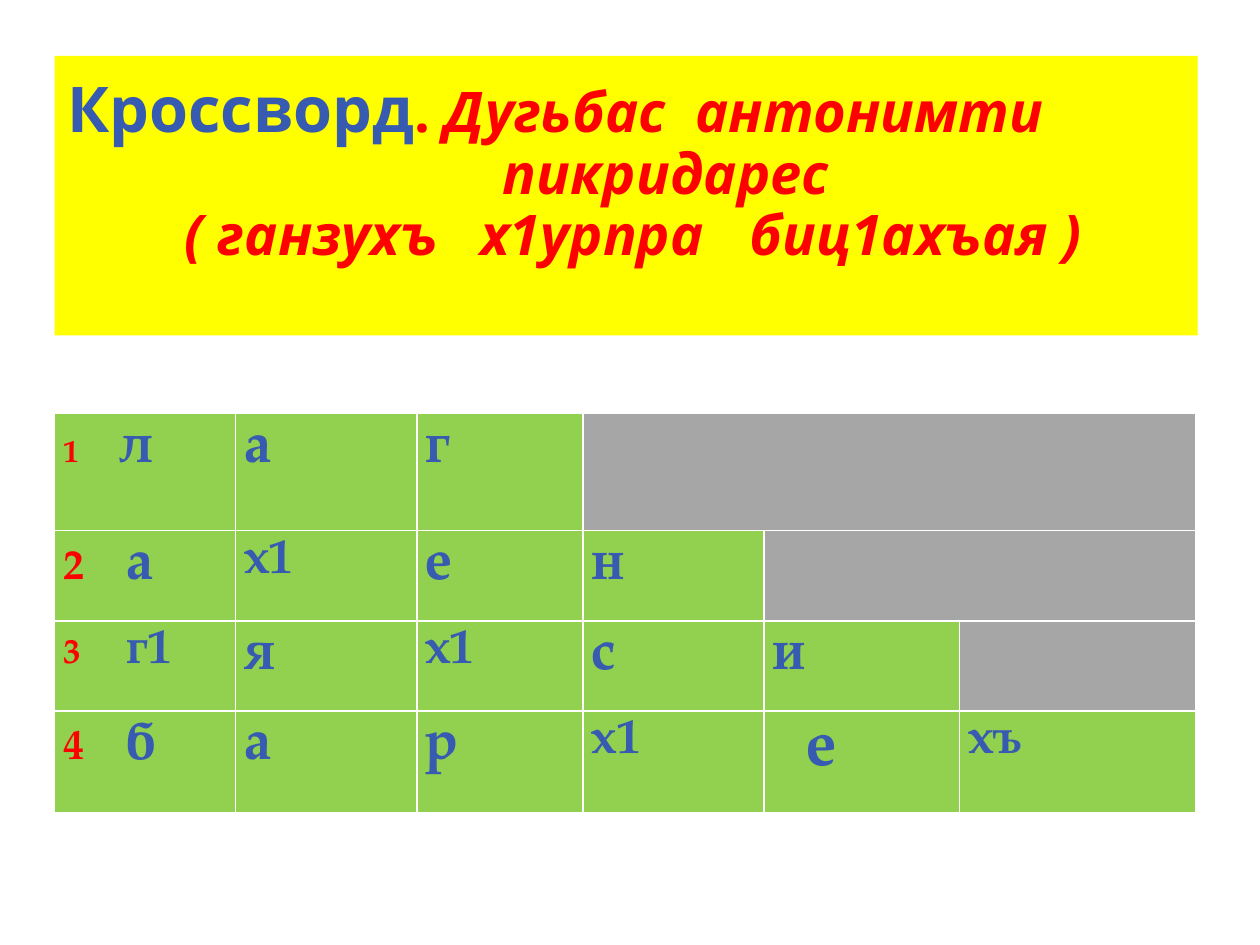
from dataclasses import dataclass

from lxml import etree
from pptx import Presentation
from pptx.dml.color import RGBColor
from pptx.enum.text import MSO_ANCHOR, MSO_AUTO_SIZE, PP_ALIGN
from pptx.oxml.ns import qn
from pptx.util import Pt

LEFT = PP_ALIGN.LEFT
BOTTOM = MSO_ANCHOR.BOTTOM
NO_AUTOFIT = MSO_AUTO_SIZE.NONE
TITLE_ONLY = 5


@dataclass(frozen=True)
class Theme:
    title_font: str = "Open Sans"
    letter_font: str = "TeX Gyre Pagella"
    blue: RGBColor = RGBColor(0x37, 0x5B, 0xB0)
    red: RGBColor = RGBColor(0xFF, 0x00, 0x00)
    yellow: RGBColor = RGBColor(0xFF, 0xFF, 0x00)
    green: RGBColor = RGBColor(0x92, 0xD0, 0x50)
    gray: RGBColor = RGBColor(0xA6, 0xA6, 0xA6)
    heading_size: int = 36
    question_size: int = 32
    letter_size: int = 32
    digraph_size: int = 28
    large_letter_size: int = 36


def set_tab_stops(paragraph, positions):
    properties = paragraph._p.get_or_add_pPr()
    stops = etree.SubElement(properties, qn("a:tabLst"))
    for position in positions:
        etree.SubElement(stops, qn("a:tab"), pos=str(Pt(position)), algn="l")


def add_run(paragraph, text, size, color):
    run = paragraph.add_run()
    run.text = text
    run.font.size = Pt(size)
    run.font.color.rgb = color
    return run


class CrosswordSlide:
    def __init__(self, slide, theme):
        self.slide = slide
        self.theme = theme

    def add_title(self, box, heading, lines):
        """Each line is its text and the tab stops that place its words."""
        theme = self.theme
        title = self.slide.shapes.title
        title.left, title.top, title.width, title.height = map(Pt, box)
        title.fill.solid()
        title.fill.fore_color.rgb = theme.yellow
        frame = title.text_frame
        frame.auto_size = NO_AUTOFIT
        frame.vertical_anchor = BOTTOM
        frame.margin_bottom = Pt(39)
        for index, (text, stops) in enumerate(lines):
            paragraph = frame.add_paragraph() if index else frame.paragraphs[0]
            paragraph.alignment = LEFT
            paragraph.line_spacing = 0.9
            paragraph.space_before = Pt(0)
            paragraph.font.name = theme.title_font
            paragraph.font.bold = True
            set_tab_stops(paragraph, stops)
            if index == 0:
                add_run(paragraph, heading, theme.heading_size, theme.blue)
                add_run(paragraph, ". ", theme.question_size, theme.red)
            run = add_run(paragraph, text, theme.question_size, theme.red)
            run.font.italic = True

    def add_crossword(self, box, widths, heights, words, numbers, large_cell):
        """Lay out one word per row; numbers gives each number's size and letter offset."""
        table = self.slide.shapes.add_table(
            len(heights), len(widths), *map(Pt, box)).table
        table.horz_banding = False
        for column, width in zip(table.columns, widths):
            column.width = Pt(width)
        for row, height in zip(table.rows, heights):
            row.height = Pt(height)
        for row, word in enumerate(words):
            for column in range(len(widths)):
                cell = table.cell(row, column)
                cell.fill.solid()
                inside = column < len(word)
                cell.fill.fore_color.rgb = self.theme.green if inside else self.theme.gray
                if inside:
                    number = (row + 1, *numbers[row]) if column == 0 else None
                    self.fill_letter(cell, word[column], number,
                                     (row, column) == large_cell)
            if len(word) < len(widths) - 1:
                table.cell(row, len(word)).merge(table.cell(row, len(widths) - 1))

    def fill_letter(self, cell, letter, number, large):
        theme = self.theme
        cell.margin_left = Pt(24 if large else 5)
        cell.margin_right = Pt(5)
        cell.margin_top = cell.margin_bottom = Pt(0)
        paragraph = cell.text_frame.paragraphs[0]
        paragraph.line_spacing = 1.15
        paragraph.font.name = theme.letter_font
        paragraph.font.bold = True
        if number:
            value, number_size, offset = number
            set_tab_stops(paragraph, [offset])
            add_run(paragraph, f"{value}\t", number_size, theme.red)
        size = theme.digraph_size if len(letter) > 1 else theme.letter_size
        add_run(paragraph, letter, theme.large_letter_size if large else size, theme.blue)


def main():
    presentation = Presentation()
    presentation.slide_width, presentation.slide_height = Pt(720), Pt(540)
    slide = presentation.slides.add_slide(presentation.slide_layouts[TITLE_ONLY])
    crossword = CrosswordSlide(slide, Theme())
    crossword.add_title(
        (31.2, 31.9, 653.2, 159.8),
        "Кроссворд",
        [
            ("Дугьбас\tантонимти", [359]),
            ("\tпикридарес", [249]),
            ("\t( ганзухъ\tх1урпра\tбиц1ахъая )", [67, 236, 390]),
        ],
    )
    widths = [103.5, 103.5, 95, 103.5, 111.5, 135]
    heights = [67, 51.5, 51.5, 58]
    crossword.add_crossword(
        (31.2, 236.3, sum(widths), sum(heights)),
        widths,
        heights,
        words=[
            ["л", "а", "г"],
            ["а", "х1", "е", "н"],
            ["г1", "я", "х1", "с", "и"],
            ["б", "а", "р", "х1", "е", "хъ"],
        ],
        numbers=[(18, 32), (24, 36), (20, 36), (24, 36)],
        large_cell=(3, 4),
    )
    presentation.save("out.pptx")


if __name__ == "__main__":
    main()
